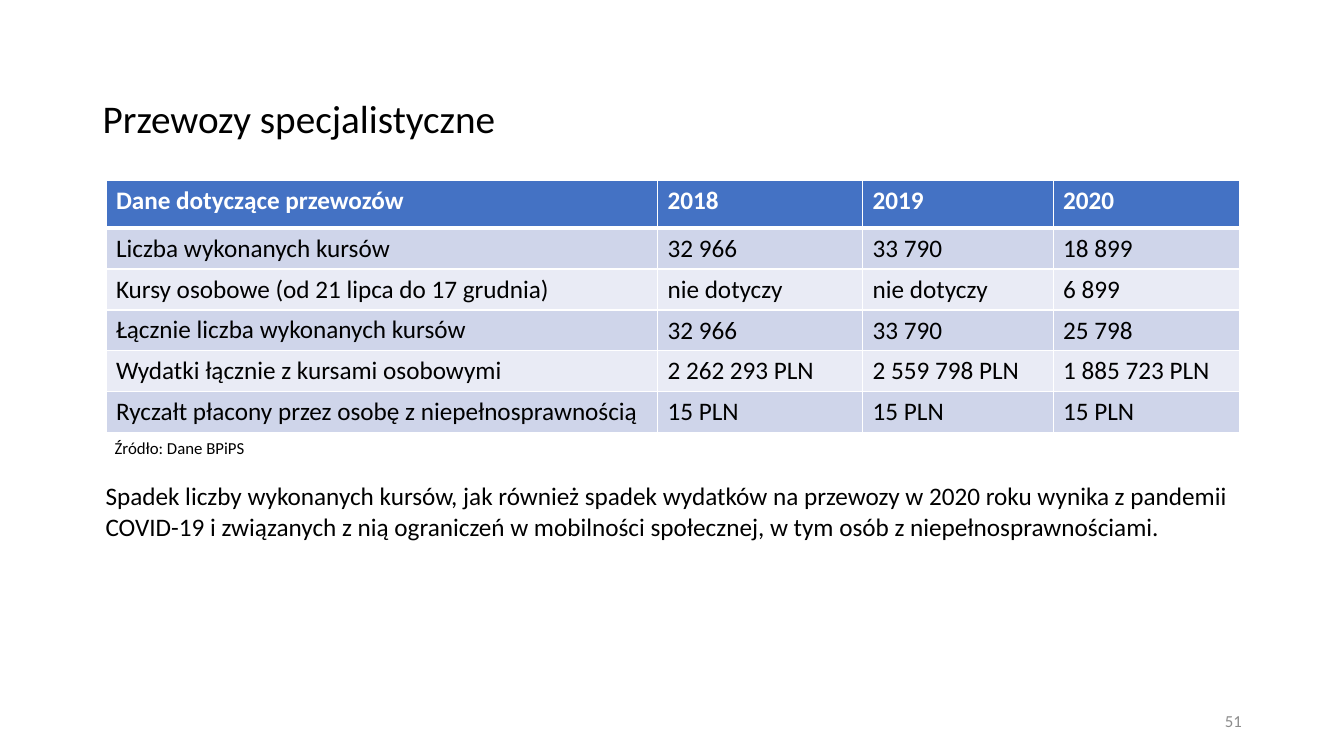
"""Builds the slide on specialist transport with its yearly data table."""
from dataclasses import dataclass

from lxml.etree import SubElement
from pptx import Presentation
from pptx.dml.color import RGBColor
from pptx.enum.text import MSO_ANCHOR, PP_ALIGN
from pptx.oxml.ns import qn
from pptx.util import Cm, Pt


@dataclass(frozen=True)
class Theme:
    font: str = "Calibri"
    title_size: int = 28
    body_size: int = 18
    small_size: int = 12
    ink: str = "000000"
    muted: str = "8C8C8C"
    white: str = "FFFFFF"
    header: str = "4472C4"
    bands: tuple = ("CFD5EA", "E9EBF5")
    rule: int = 1
    header_rule: int = 3


THEME = Theme()
COLUMN_WIDTHS = (13.9, 5.17, 4.8, 4.7)
HEADER_HEIGHT, ROW_HEIGHT = 1.2, 1.03
TRANSPORT_DATA = (
    ("Dane dotyczące przewozów", "2018", "2019", "2020"),
    ("Liczba wykonanych kursów", "32 966", "33 790", "18 899"),
    ("Kursy osobowe (od 21 lipca do 17 grudnia)", "nie dotyczy", "nie dotyczy", "6 899"),
    ("Łącznie liczba wykonanych kursów", "32 966", "33 790", "25 798"),
    ("Wydatki łącznie z kursami osobowymi", "2 262 293 PLN", "2 559 798 PLN", "1 885 723 PLN"),
    ("Ryczałt płacony przez osobę z niepełnosprawnością", "15 PLN", "15 PLN", "15 PLN"),
)
COMMENTARY = (
    "Spadek liczby wykonanych kursów, jak również spadek wydatków na przewozy "
    "w 2020 roku wynika z pandemii COVID-19 i związanych z nią ograniczeń "
    "w mobilności społecznej, w tym osób z niepełnosprawnościami."
)


def write(frame, text, size, color=THEME.ink, bold=False):
    """Put one formatted paragraph into a text frame and return it."""
    frame.text = text
    para = frame.paragraphs[0]
    for span in para.runs:
        span.font.name = THEME.font
        span.font.size = Pt(size)
        span.font.bold = bold
        span.font.color.rgb = RGBColor.from_string(color)
    return para


def add_text(page, area, text, size, color=THEME.ink, anchor=MSO_ANCHOR.TOP):
    """Add a wrapping text box over an area in centimetres; return its paragraph."""
    box = page.shapes.add_textbox(*map(Cm, area))
    box.text_frame.word_wrap = True
    box.text_frame.vertical_anchor = anchor
    return write(box.text_frame, text, size, color)


def add_borders(cell, widths):
    """Draw white cell borders from a mapping of side tag to width in points."""
    properties = cell._tc.get_or_add_tcPr()
    for side, width in widths.items():
        line = SubElement(properties, qn(f"a:{side}"), w=str(Pt(width)))
        fill = SubElement(line, qn("a:solidFill"))
        SubElement(fill, qn("a:srgbClr"), val=THEME.white)


def style_cell(cell, text, row, column):
    """Fill, border and write a cell according to its place in the table."""
    is_header = row == 0
    widths = dict.fromkeys(("lnL", "lnR", "lnT", "lnB"), THEME.rule)
    if is_header:
        widths["lnB"] = THEME.header_rule
    elif row == 1:
        widths["lnT"] = THEME.header_rule
    add_borders(cell, widths)
    background = THEME.header if is_header else THEME.bands[(row - 1) % 2]
    cell.fill.solid()
    cell.fill.fore_color.rgb = RGBColor.from_string(background)
    if not is_header and column > 0:
        cell.vertical_anchor = MSO_ANCHOR.MIDDLE
    color = THEME.white if is_header else THEME.ink
    write(cell.text_frame, text, THEME.body_size, color, is_header)


def add_data_table(page, left, top, rows):
    """Add the banded table with its top left corner in centimetres."""
    heights = [HEADER_HEIGHT] + [ROW_HEIGHT] * (len(rows) - 1)
    table = page.shapes.add_table(
        len(rows), len(COLUMN_WIDTHS), Cm(left), Cm(top),
        Cm(sum(COLUMN_WIDTHS)), Cm(sum(heights)),
    ).table
    for column, width in zip(table.columns, COLUMN_WIDTHS):
        column.width = Cm(width)
    for row, (height, texts) in enumerate(zip(heights, rows)):
        table.rows[row].height = Cm(height)
        for column, text in enumerate(texts):
            style_cell(table.cell(row, column), text, row, column)


def main():
    """Build the slide and save the deck."""
    deck = Presentation()
    deck.slide_width, deck.slide_height = Cm(33.87), Cm(19.05)
    page = deck.slides.add_slide(deck.slide_layouts[6])

    title = add_text(page, (2.34, 2.24, 29.2, 1.6), "Przewozy specjalistyczne",
                     THEME.title_size, anchor=MSO_ANCHOR.MIDDLE)
    title.line_spacing = 0.9
    add_data_table(page, 2.67, 4.55, TRANSPORT_DATA)
    add_text(page, (2.64, 10.9, 20.83, 0.77), "Źródło: Dane BPiPS", THEME.small_size)
    add_text(page, (2.41, 11.99, 28.88, 2.57), COMMENTARY, THEME.body_size)
    number = add_text(page, (23.93, 17.65, 7.62, 1.02), "51", THEME.small_size,
                      THEME.muted, MSO_ANCHOR.MIDDLE)
    number.alignment = PP_ALIGN.RIGHT

    deck.save("out.pptx")


if __name__ == "__main__":
    main()
